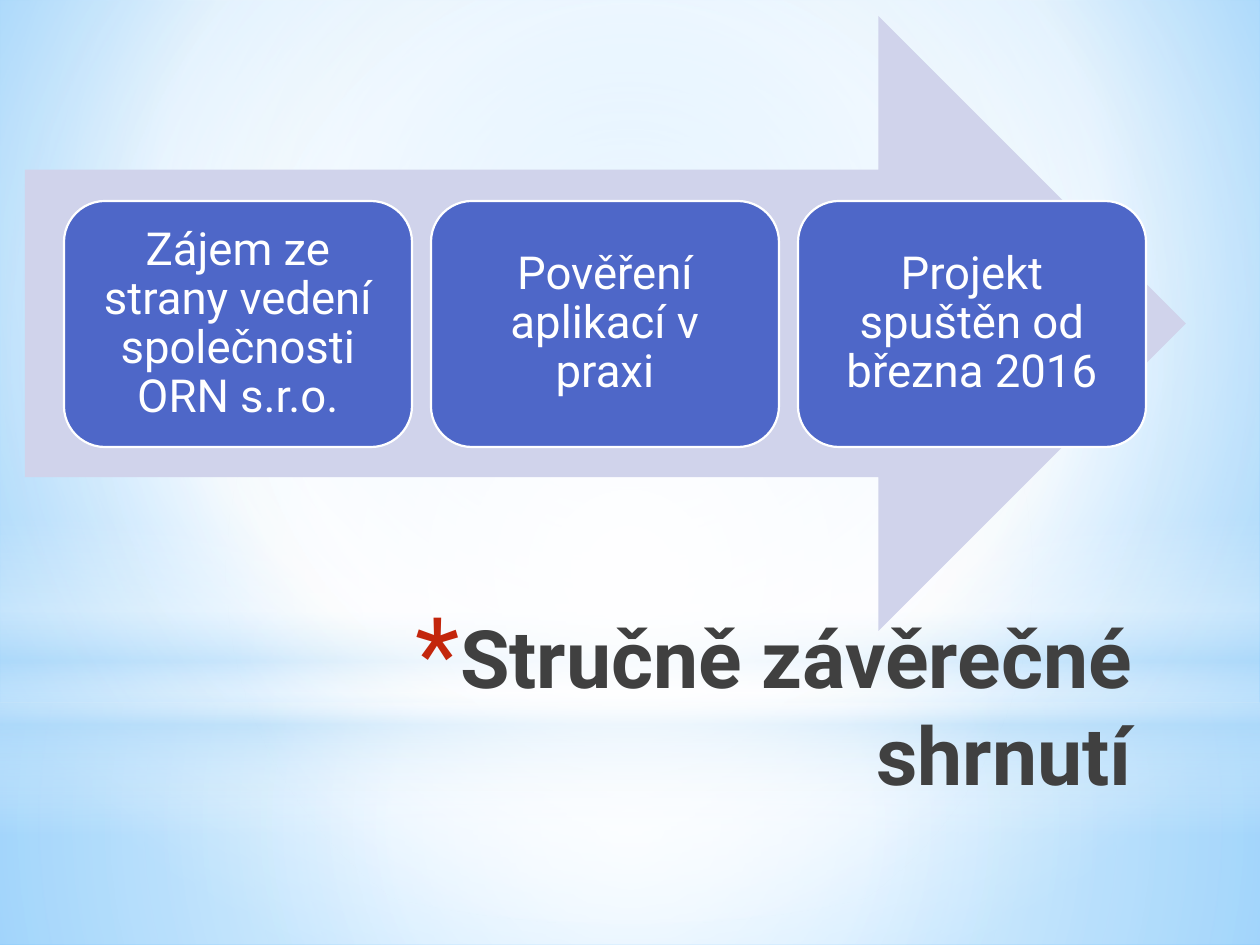
from lxml.etree import SubElement
from pptx import Presentation
from pptx.dml.color import RGBColor
from pptx.enum.shapes import MSO_SHAPE
from pptx.enum.text import MSO_ANCHOR, PP_ALIGN
from pptx.oxml.ns import qn
from pptx.util import Pt

EMU_PER_PX = 914400 / 126
FONT = "Roboto"
CENTRE = (50, 50, 50, 50)


def px(length):
    return round(length * EMU_PER_PX)


def color(value):
    return RGBColor.from_string(value)


def add_element(parent, tag, **attributes):
    return SubElement(parent, qn(tag), {key: str(value) for key, value in attributes.items()})


def make_gradient(solid_fill, stops, focus=None):
    gradient = solid_fill.makeelement(qn("a:gradFill"), {"rotWithShape": "1"})
    stop_list = add_element(gradient, "a:gsLst")
    for position, value, opacity in stops:
        stop = add_element(stop_list, "a:gs", pos=position * 1000)
        stop_color = add_element(stop, "a:srgbClr", val=value)
        if opacity < 100:
            add_element(stop_color, "a:alpha", val=opacity * 1000)
    if focus:
        circle = add_element(gradient, "a:path", path="circle")
        sides = {side: percent * 1000 for side, percent in zip("ltrb", focus)}
        add_element(circle, "a:fillToRect", **sides)
    else:
        add_element(gradient, "a:lin", ang=5400000, scaled=0)
    solid_fill.getparent().replace(solid_fill, gradient)


def set_background(slide, stops, focus):
    slide.background.fill.solid()
    make_gradient(slide.element.xpath(".//p:bgPr/a:solidFill")[0], stops, focus)


def add_filled_shape(slide, kind, bounds, fill):
    shape = slide.shapes.add_shape(kind, *map(px, bounds))
    shape.shadow.inherit = False
    shape.fill.solid()
    shape.fill.fore_color.rgb = color(fill)
    shape.line.fill.background()
    return shape


def add_glow(slide, kind, top, height, stops, focus=CENTRE):
    shape = add_filled_shape(slide, kind, (0, top, 1260, height), "FFFFFF")
    make_gradient(shape.element.xpath("./p:spPr/a:solidFill")[0], stops, focus)


def style_paragraph(paragraph, text, size, value, alignment):
    paragraph.text = text
    paragraph.alignment = alignment
    paragraph.font.name = FONT
    paragraph.font.size = Pt(size)
    paragraph.font.color.rgb = color(value)


def add_title(slide, text):
    title = slide.shapes.add_textbox(px(247), px(602), px(897), px(158))
    title.text_frame.word_wrap = True
    paragraph = title.text_frame.paragraphs[0]
    style_paragraph(paragraph, text, 46, "404040", PP_ALIGN.RIGHT)
    paragraph.font.bold = True
    properties = paragraph._p.get_or_add_pPr()
    properties.set("marL", str(px(44)))
    properties.set("indent", str(-px(44)))
    bullet = [
        add_element(properties, "a:buClr"),
        add_element(properties, "a:buSzPct", val=128000),
        add_element(properties, "a:buFont", typeface=FONT),
        add_element(properties, "a:buChar", char="*"),
    ]
    add_element(bullet[0], "a:srgbClr", val="C3260C")
    default_run = properties.find(qn("a:defRPr"))
    if default_run is not None:
        properties.append(default_run)


def add_step(slide, left, text):
    box = add_filled_shape(slide, MSO_SHAPE.ROUNDED_RECTANGLE, (left, 201, 348, 246), "4E67C8")
    box.line.color.rgb = color("FFFFFF")
    box.line.width = Pt(1.25)
    frame = box.text_frame
    frame.word_wrap = True
    frame.vertical_anchor = MSO_ANCHOR.MIDDLE
    frame.margin_left = frame.margin_right = px(14)
    frame.margin_top = frame.margin_bottom = px(14)
    paragraph = frame.paragraphs[0]
    style_paragraph(paragraph, text, 26, "FFFFFF", PP_ALIGN.CENTER)
    paragraph.line_spacing = 0.9


def main():
    presentation = Presentation()
    presentation.slide_width = px(1260)
    presentation.slide_height = px(945)
    slide = presentation.slides.add_slide(presentation.slide_layouts[6])

    set_background(
        slide,
        [(0, "9ED5FF", 100), (60, "FFFFFF", 100), (100, "5BB9FF", 100)],
        (20, 10, 20, 60),
    )
    add_glow(slide, MSO_SHAPE.RECTANGLE, 703, 242,
             [(0, "FFFFFF", 91), (37, "FFFFFF", 76), (100, "B4DCFA", 79)])
    add_glow(slide, MSO_SHAPE.RECTANGLE, 0, 703,
             [(0, "FFFFFF", 89), (48, "FFFFFF", 62), (100, "B4DCFA", 79)])
    add_glow(slide, MSO_SHAPE.RECTANGLE, 519, 315,
             [(0, "FFFFFF", 0), (29, "FFFFFF", 30), (45, "B4DCFA", 40),
              (55, "FFFFFF", 26), (65, "B4DCFA", 60), (100, "FFFFFF", 0)], None)
    add_glow(slide, MSO_SHAPE.OVAL, 220, 703, [(0, "FFFFFF", 100), (56, "FFFFFF", 0)])

    add_title(slide, "Stručně závěrečné shrnutí")
    add_filled_shape(slide, MSO_SHAPE.RIGHT_ARROW, (25, 16, 1161, 615), "D0D3EB")
    steps = [
        "Zájem ze strany vedení společnosti ORN s.r.o.",
        "Pověření aplikací v praxi",
        "Projekt spuštěn od března 2016",
    ]
    for index, text in enumerate(steps):
        add_step(slide, 64 + index * 367, text)

    presentation.save("out.pptx")


if __name__ == "__main__":
    main()
